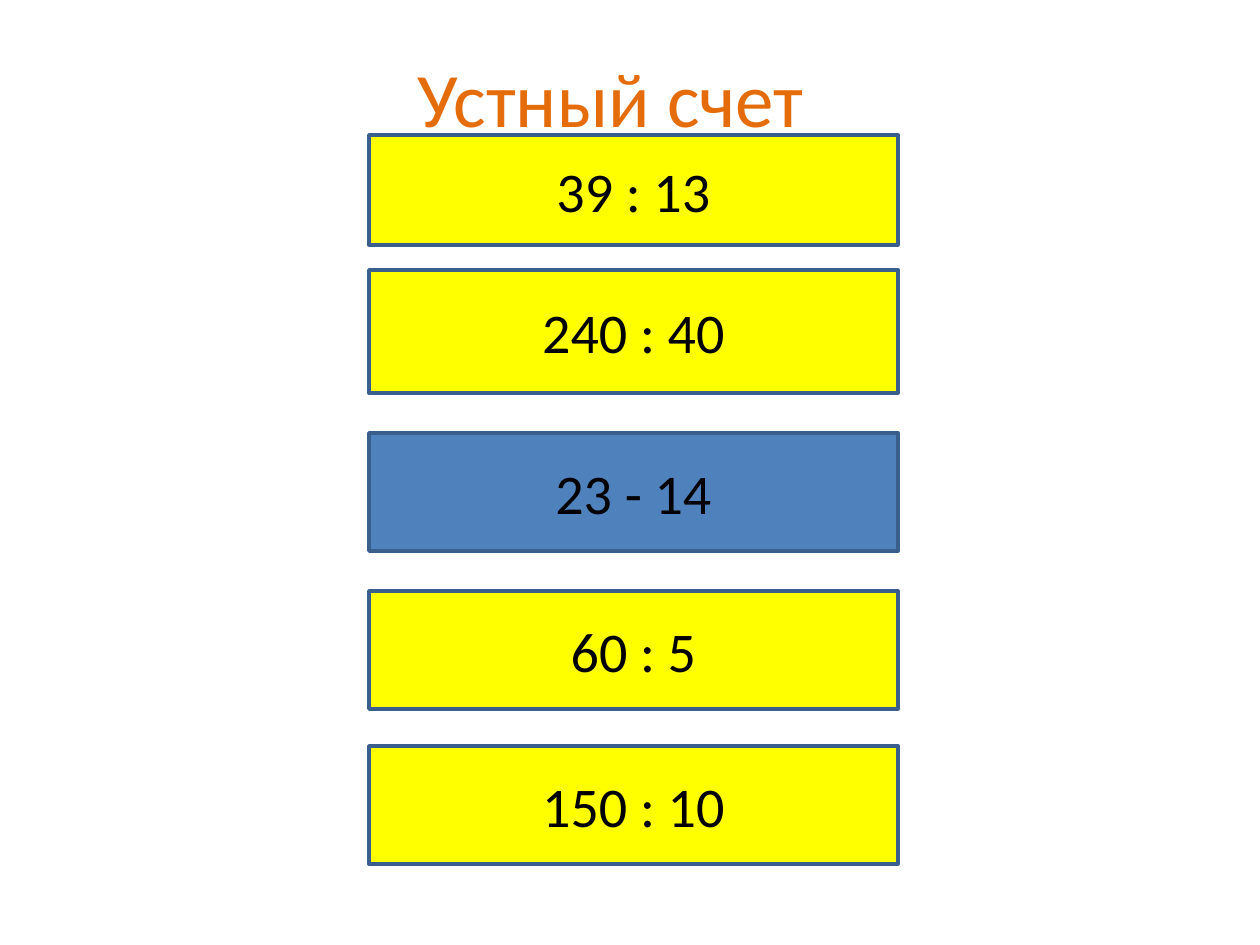
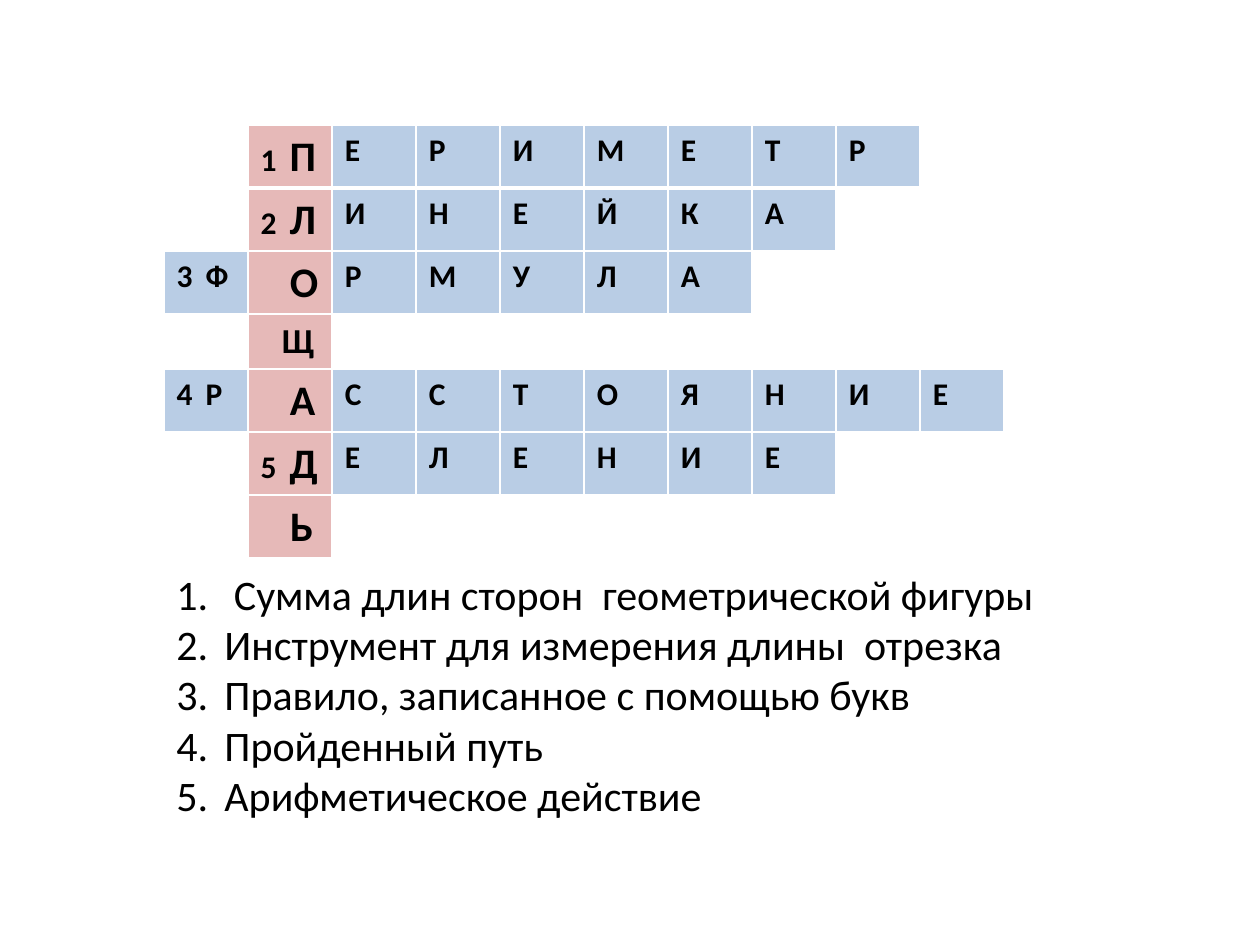
from lxml.etree import SubElement
from pptx import Presentation
from pptx.dml.color import RGBColor
from pptx.enum.shapes import MSO_SHAPE
from pptx.enum.text import MSO_ANCHOR, PP_ALIGN
from pptx.oxml.ns import qn
from pptx.util import Emu, Pt

FONT = "Calibri"
COLORS = {
    "white": "FFFFFF", "black": "000000", "title": "E46C0A",
    "yellow": "FFFF00", "blue": "4F81BD", "outline": "3A5F8C",
    "key": "E6B9B8", "letter": "B9CDE5",
}

# top, height, fill, text
EXPRESSIONS = [
    (135, 110, "yellow", "39 : 13"),
    (270, 123, "yellow", "240 : 40"),
    (433, 118, "blue", "23 - 14"),
    (591, 118, "yellow", "60 : 5"),
    (746, 118, "yellow", "150 : 10"),
]

# number, letter before the key column, key letter, letters after it
WORDS = [
    ("1", "", "П", "ЕРИМЕТР"),
    ("2", "", "Л", "ИНЕЙКА"),
    ("3", "Ф", "О", "РМУЛА"),
    ("", "", "Щ", ""),
    ("4", "Р", "А", "ССТОЯНИЕ"),
    ("5", "", "Д", "ЕЛЕНИЕ"),
    ("", "", "Ь", ""),
]
COLUMNS, CELL_W, CELL_H = 10, 84, 52
INSET, LETTER_INDENT = 13, 29

CLUES = [
    " Сумма длин сторон  геометрической фигуры",
    "Инструмент для измерения длины  отрезка",
    "Правило, записанное с помощью букв",
    "Пройденный путь",
    "Арифметическое действие",
]


def px(n):
    return Emu(round(n * 914400 / 126))


def rgb(name):
    return RGBColor.from_string(COLORS[name])


def add_text(p, text, size=18, bold=False, color="black", align=PP_ALIGN.LEFT):
    p.alignment = align
    r = p.add_run()
    r.text = text
    r.font.name = FONT
    r.font.size = Pt(size)
    r.font.bold = bold
    r.font.color.rgb = rgb(color)


def add_box(s, box):
    tf = s.shapes.add_textbox(*map(px, box)).text_frame
    tf.word_wrap = True
    return tf


def add_title(s, box, text):
    tf = add_box(s, box)
    tf.vertical_anchor = MSO_ANCHOR.MIDDLE
    add_text(tf.paragraphs[0], text, size=44, color="title", align=PP_ALIGN.CENTER)


def add_card(s, box, fill, text):
    sp = s.shapes.add_shape(MSO_SHAPE.RECTANGLE, *map(px, box))
    sp.shadow.inherit = False
    sp.fill.solid()
    sp.fill.fore_color.rgb = rgb(fill)
    sp.line.color.rgb = rgb("outline")
    sp.line.width = Pt(2)
    sp.text_frame.vertical_anchor = MSO_ANCHOR.MIDDLE
    add_text(sp.text_frame.paragraphs[0], text, size=32, align=PP_ALIGN.CENTER)


def style_cell(cell, fill, bottom):
    """Set white borders and the fill; bottom is the lower border in points."""
    tcPr = cell._tc.get_or_add_tcPr()
    for side, width in (("L", 1), ("R", 1), ("T", 1), ("B", bottom)):
        ln = SubElement(tcPr, qn(f"a:ln{side}"), w=str(Pt(width)))
        solid = SubElement(ln, qn("a:solidFill"))
        SubElement(solid, qn("a:srgbClr"), val=COLORS["white"])
    cell.fill.solid()
    cell.fill.fore_color.rgb = rgb(fill)


def write_cell(cell, number, letter, size, indent):
    """Write a letter at the indent, after its word number if it has one."""
    p = cell.text_frame.paragraphs[0]
    if number:
        tabs = SubElement(p._p.get_or_add_pPr(), qn("a:tabLst"))
        SubElement(tabs, qn("a:tab"), pos=str(px(indent)), algn="l")
        add_text(p, number + "\t", bold=True)
    else:
        cell.margin_left = px(INSET + indent)
    add_text(p, letter, size=size, bold=True)


def add_crossword(s, left, top):
    frame = s.shapes.add_table(len(WORDS), COLUMNS, px(left), px(top),
                               px(COLUMNS * CELL_W), px(len(WORDS) * CELL_H))
    table = frame.table
    table.first_row = table.horz_banding = False
    for column in table.columns:
        column.width = px(CELL_W)
    for i, (number, before, key, after) in enumerate(WORDS):
        table.rows[i].height = px(CELL_H)
        letters = (before or " ") + key + after.ljust(COLUMNS - 2)
        start = 0 if before else 1
        for j, letter in enumerate(letters):
            cell = table.cell(i, j)
            is_key = j == 1
            fill = "key" if is_key else "letter" if letter.strip() else "white"
            style_cell(cell, fill, bottom=3 if i == 0 else 1)
            if fill == "white":
                continue
            wide = letter == "Щ"
            size = (20 if wide else 24) if is_key else 18
            indent = (21 if wide else LETTER_INDENT) if is_key or j == start else 0
            write_cell(cell, number if j == start else "", letter, size, indent)


def add_clues(s, box):
    tf = add_box(s, box)
    for i, clue in enumerate(CLUES):
        p = tf.add_paragraph() if i else tf.paragraphs[0]
        pPr = p._p.get_or_add_pPr()
        pPr.set("marL", str(px(48)))
        pPr.set("indent", str(-px(48)))
        SubElement(pPr, qn("a:buFont"), typeface="+mj-lt")
        SubElement(pPr, qn("a:buAutoNum"), type="arabicPeriod")
        add_text(p, clue, size=24)


def mental_math_slide(s):
    add_title(s, (63, 38, 1113, 117), "Устный счет ")
    for top, height, fill, text in EXPRESSIONS:
        add_card(s, (369, top, 529, height), fill, text)


def crossword_slide(s):
    add_crossword(s, 164, 125)
    add_clues(s, (164, 562, 963, 305))


def main():
    prs = Presentation()
    prs.slide_width, prs.slide_height = px(1260), px(945)
    for build in (mental_math_slide, crossword_slide):
        build(prs.slides.add_slide(prs.slide_layouts[6]))
    prs.save("out.pptx")


if __name__ == "__main__":
    main()
